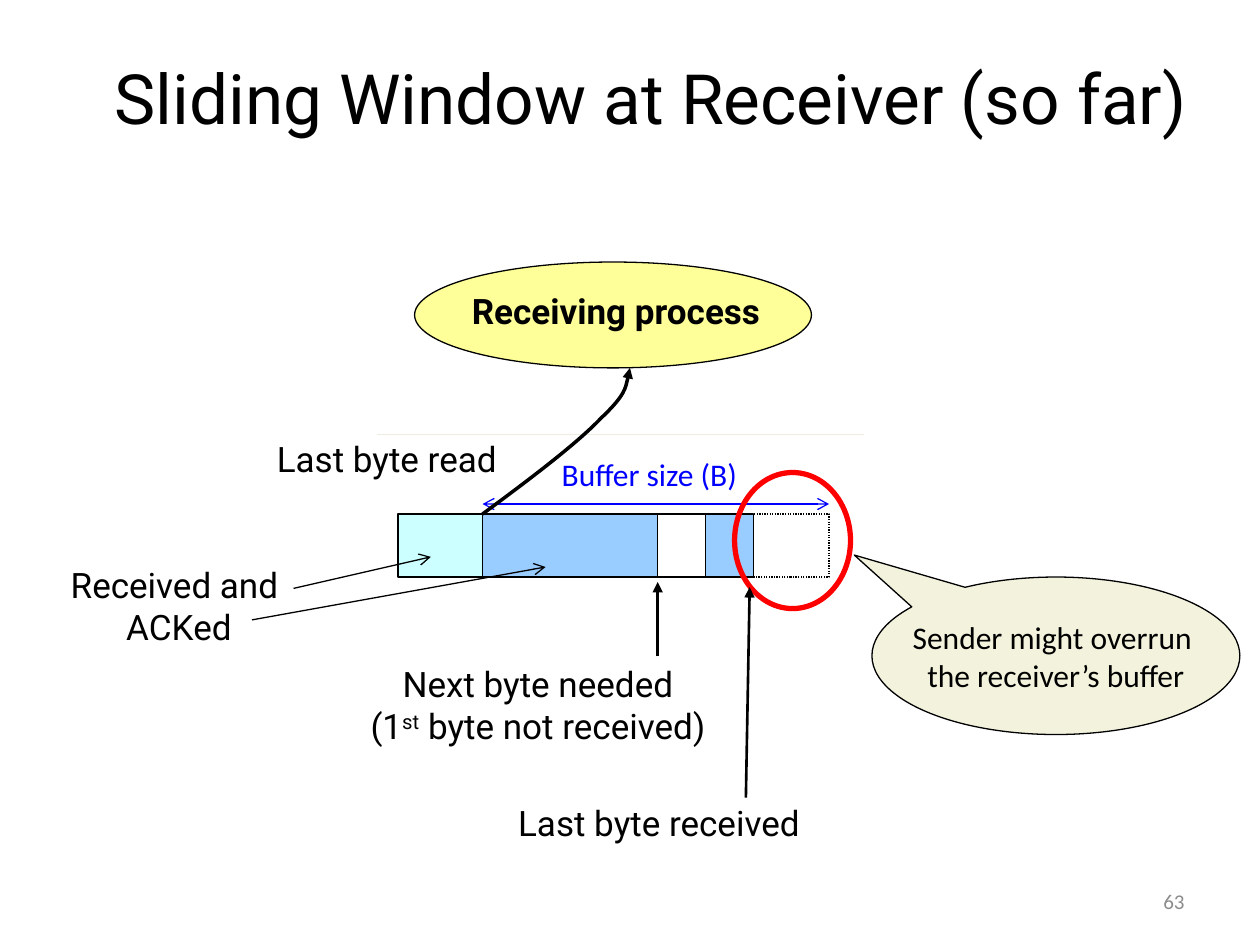
from lxml import etree
from pptx import Presentation
from pptx import util as u
from pptx.dml.color import RGBColor
from pptx.enum import dml, shapes, text
from pptx.oxml.ns import qn

BLACK = RGBColor(0x00, 0x00, 0x00)
WHITE = RGBColor(0xFF, 0xFF, 0xFF)
BLUE = RGBColor(0x00, 0x00, 0xFF)
RED = RGBColor(0xFF, 0x00, 0x00)
GRAY = RGBColor(0x8C, 0x8C, 0x8C)
YELLOW = RGBColor(0xFF, 0xFF, 0x99)
CYAN = RGBColor(0xCC, 0xFF, 0xFF)
SKY = RGBColor(0x99, 0xCC, 0xFF)
CREAM = RGBColor(0xF3, 0xF3, 0xDD)
RULE = RGBColor(0xEE, 0xEC, 0xE1)
SHAPE = shapes.MSO_SHAPE
CENTER = text.PP_ALIGN.CENTER
MIDDLE = text.MSO_ANCHOR.MIDDLE
LABEL = {"name": "Roboto", "size": u.Pt(20)}
NOTE = {"name": "Calibri", "size": u.Pt(18)}


def inches(*values):
    return [u.Inches(v) for v in values]


def write(tf, runs, font, color=BLACK, align=CENTER):
    """Fill the first paragraph; a run is (text, baseline in percent)."""
    p = tf.paragraphs[0]
    p.alignment = align
    for words, baseline in runs:
        for i, line in enumerate(words.split("\n")):
            if i:
                p.add_line_break()
            r = p.add_run()
            r.text = line
            for name, value in font.items():
                setattr(r.font, name, value)
            r.font.color.rgb = color
            if baseline:
                r.font._element.set("baseline", str(baseline * 1000))


def add_label(s, box, runs, font=LABEL, color=BLACK, align=CENTER):
    tf = s.shapes.add_textbox(*inches(*box)).text_frame
    tf.word_wrap = False
    tf.auto_size = text.MSO_AUTO_SIZE.SHAPE_TO_FIT_TEXT
    write(tf, runs, font, color, align)


def add_block(s, kind, box, fill=None, line=BLACK, width=0.75):
    sp = s.shapes.add_shape(kind, *inches(*box))
    sp.shadow.inherit = False
    if fill is None:
        sp.fill.background()
    else:
        sp.fill.solid()
        sp.fill.fore_color.rgb = fill
    sp.line.color.rgb = line
    sp.line.width = u.Pt(width)
    return sp


def add_arrowheads(sp, **ends):
    """Set the heads by end, as in tailEnd="triangle"."""
    ln = sp.line._get_or_add_ln()
    for end in ("headEnd", "tailEnd"):
        if end in ends:
            etree.SubElement(ln, qn(f"a:{end}"), type=ends[end])


def add_line(s, start, end, color=BLACK, width=0.75, **ends):
    line = s.shapes.add_connector(
        shapes.MSO_CONNECTOR.STRAIGHT, *inches(*start, *end))
    line.line.color.rgb = color
    line.line.width = u.Pt(width)
    add_arrowheads(line, **ends)
    etree.SubElement(line._element.spPr, qn("a:effectLst"))


def add_curve(s, points, width):
    """Draw a Bezier curve: a start, then three points for each segment."""
    builder = s.shapes.build_freeform(*inches(*points[0]), scale=1.0)
    builder.add_line_segments([inches(*pt) for pt in points[1:]], close=False)
    sp = builder.convert_to_shape()
    steps = list(sp._element.iter(qn("a:lnTo")))
    for i in range(0, len(steps), 3):
        bezier = etree.Element(qn("a:cubicBezTo"))
        steps[i].addprevious(bezier)
        for step in steps[i:i + 3]:
            bezier.append(step[0])
            step.getparent().remove(step)
    sp.shadow.inherit = False
    sp.fill.background()
    sp.line.color.rgb = BLACK
    sp.line.width = u.Pt(width)
    add_arrowheads(sp, tailEnd="triangle")


def add_title(s, box, words):
    title = s.shapes.title
    for name, value in zip(("left", "top", "width", "height"), inches(*box)):
        setattr(title, name, value)
    title.text_frame.vertical_anchor = MIDDLE
    write(title.text_frame, [(words, 0)],
          {"name": "Roboto", "size": u.Pt(39.6)})


def add_process(s, box):
    x, y, w, h = box
    add_block(s, SHAPE.OVAL, box, YELLOW)
    add_label(s, (x + 0.27, y + 0.17, 2.66, 0.43),
              [("Receiving process", 0)], {**LABEL, "bold": True})
    rule_y = y + h + 0.53
    add_line(s, (x - 0.3, rule_y), (x + w + 0.42, rule_y), RULE)


def add_buffer(s, box):
    """Draw the byte stream, the window size above it and the overrun ring."""
    x, y, w, h = box
    window, right = x + 0.67, x + w
    for dx, width, fill in ((0, 0.67, CYAN), (0.67, 1.43, SKY),
                            (2.06, 0.38, WHITE), (2.81, 0.61, None),
                            (2.44, 0.38, SKY)):
        cell = add_block(s, SHAPE.RECTANGLE, (x + dx, y, width, h), fill)
        if fill is None:
            cell.line.dash_style = dml.MSO_LINE.ROUND_DOT
    add_label(s, (window + 0.53, y - 0.52, 1.97, 0.44),
              [("Buffer size (B)", 0)], NOTE, BLUE, text.PP_ALIGN.LEFT)
    add_line(s, (window, y - 0.08), (right, y - 0.08), BLUE,
             headEnd="arrow", tailEnd="arrow")
    add_block(s, SHAPE.OVAL, (right - 0.75, y - 0.33, 0.92, 1.08),
              line=RED, width=3)


def add_pointers(s, box):
    """Label the bytes of the buffer in the given box."""
    x, y, w, h = box
    offsets = ((0.67, 0), (1.05, -0.28), (1.42, -0.56), (1.61, -0.76),
               (1.81, -0.95), (1.82, -1.06), (1.84, -1.16))
    add_curve(s, [(x + dx, y + dy) for dx, dy in offsets], 2)
    for start, end, width, head in (
            ((2.06, 1.13), (2.06, 0.54), 1.5, "triangle"),
            ((2.76, 2.25), (2.79, 0.58), 1.5, "triangle"),
            ((-0.83, 0.59), (0.26, 0.34), 0.75, "arrow"),
            ((-1.16, 0.84), (1.17, 0.42), 0.75, "arrow")):
        add_line(s, (x + start[0], y + start[1]), (x + end[0], y + end[1]),
                 width=width, tailEnd=head)
    for dx, dy, width, height, runs in (
            (-1.08, -0.66, 1.98, 0.44, [("Last byte read", 0)]),
            (-2.7, 0.34, 1.92, 0.77, [("Received and \nACKed", 0)]),
            (-0.34, 1.13, 2.9, 0.77, [("Next byte needed\n(1", 0), ("st", 30),
                                      (" byte not received)", 0)]),
            (0.83, 2.23, 2.48, 0.44, [("Last byte received", 0)])):
        add_label(s, (x + dx, y + dy, width, height), runs)


def add_callout(s, box, words):
    sp = add_block(s, SHAPE.OVAL_CALLOUT, box, CREAM)
    sp.adjustments[0], sp.adjustments[1] = -0.548, -0.64
    sp.text_frame.word_wrap = False
    sp.text_frame.vertical_anchor = MIDDLE
    write(sp.text_frame, [(words, 0)], NOTE)


def add_page_number(s, box, number):
    tf = s.shapes.add_textbox(*inches(*box)).text_frame
    tf.word_wrap = True
    tf.vertical_anchor = MIDDLE
    write(tf, [(number, 0)], {"name": "Calibri", "size": u.Pt(12)},
          GRAY, text.PP_ALIGN.RIGHT)


def main():
    prs = Presentation()
    prs.slide_width, prs.slide_height = inches(10, 7.5)
    s = prs.slides.add_slide(prs.slide_layouts[5])
    buffer_box = (3.16, 4.08, 3.42, 0.5)
    add_title(s, (0.5, 0.13, 9.33, 1.28), "Sliding Window at Receiver (so far)")
    add_process(s, (3.29, 2.08, 3.15, 0.84))
    add_buffer(s, buffer_box)
    add_pointers(s, buffer_box)
    add_callout(s, (6.92, 4.58, 2.92, 1.25),
                "Sender might overrun \nthe receiver’s buffer")
    add_page_number(s, (7.17, 6.95, 2.33, 0.4), "63")
    prs.save("out.pptx")


if __name__ == "__main__":
    main()
